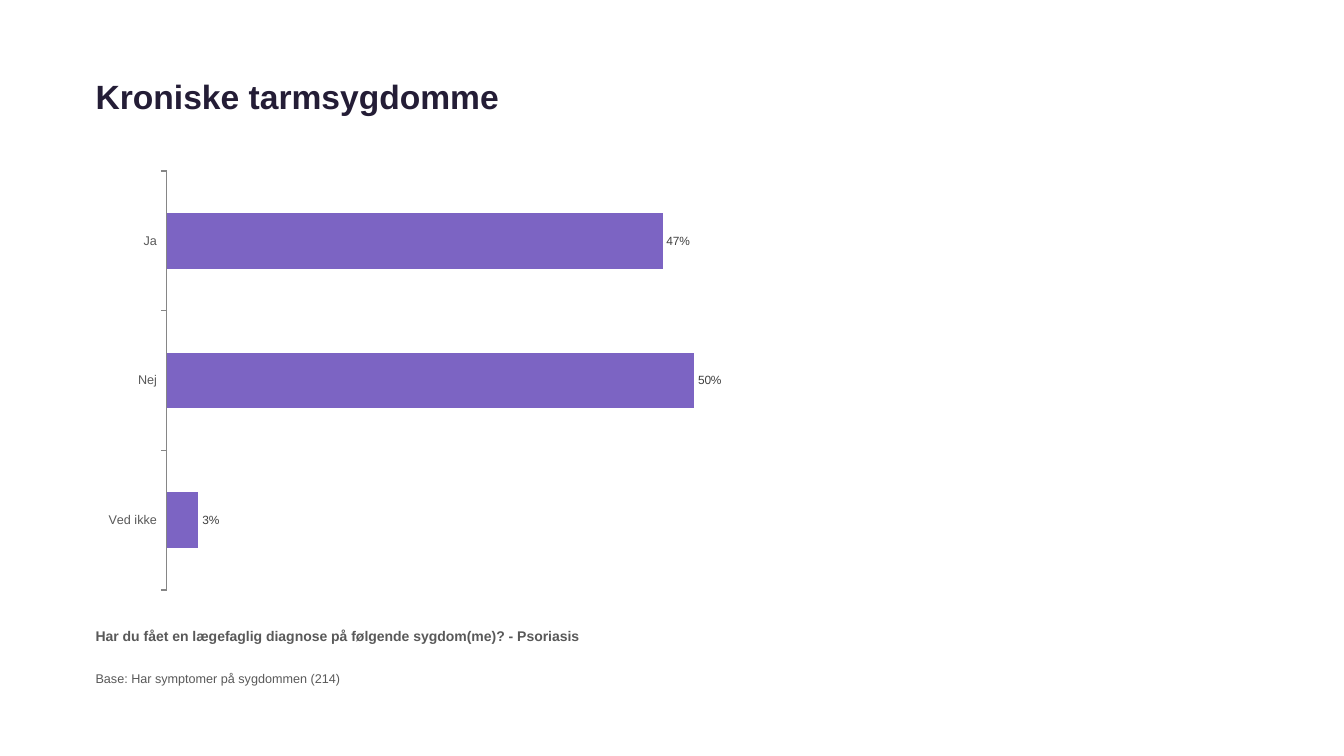
from lxml import etree
from pptx import Presentation
from pptx import util as u
from pptx.chart.data import CategoryChartData
from pptx.dml.color import RGBColor
from pptx.enum import chart as ch
from pptx.oxml.ns import qn

FONT = "Arial"
COLORS = {
    "title": "241D36",
    "text": "595959",
    "label": "404040",
    "bar": "7C64C3",
    "axis": "868686",
}
LEFT, WIDTH = 2.16, 29.54

# text, top, height (cm), size (pt), colour, bold
TEXTS = [
    ("Kroniske tarmsygdomme", 1.8, 1.27, 24, "title", True),
    ("Har du fået en lægefaglig diagnose på følgende sygdom(me)? - Psoriasis",
     15.7, 1.09, 10, "text", True),
    ("Base: Har symptomer på sygdommen (214)", 16.79, 0.71, 9, "text", False),
]
ANSWERS = {"Ved ikke": 0.03, "Nej": 0.5, "Ja": 0.47}
CHART_BOX = (LEFT, 4.09, 29.21, 11)
PLOT_LAYOUT = {"x": 0.07, "y": 0.02, "w": 0.91, "h": 0.96}


def rgb(name):
    return RGBColor.from_string(COLORS[name])


def style_font(font, size, color, bold=False):
    font.name = FONT
    font.size = u.Pt(size)
    font.bold = bold
    font.color.rgb = rgb(color)


def add_text(page, content, top, height, size, color, bold):
    box = page.shapes.add_textbox(*map(u.Cm, (LEFT, top, WIDTH, height)))
    box.text_frame.word_wrap = True
    para = box.text_frame.paragraphs[0]
    para.text = content
    style_font(para.font, size, color, bold)


def fix_plot_area(chart):
    """Pin the inner plot area to fixed fractions of the chart."""
    plot_area = chart.plots[0]._element.getparent()
    layout = plot_area.find(qn("c:layout"))
    if layout is None:
        layout = etree.Element(qn("c:layout"))
        plot_area.insert(0, layout)
    manual = etree.SubElement(layout, qn("c:manualLayout"))
    settings = {"layoutTarget": "inner", "xMode": "edge", "yMode": "edge", **PLOT_LAYOUT}
    for tag, value in settings.items():
        etree.SubElement(manual, qn(f"c:{tag}")).set("val", str(value))


def add_answer_chart(page):
    data = CategoryChartData(number_format="0%")
    data.categories = list(ANSWERS)
    data.add_series("Series 1", list(ANSWERS.values()))
    chart = page.shapes.add_chart(
        ch.XL_CHART_TYPE.BAR_CLUSTERED, *map(u.Cm, CHART_BOX), data).chart
    chart.has_legend = chart.has_title = False
    chart.font.name = FONT
    chart.font.size = u.Pt(18)

    plot = chart.plots[0]
    plot.vary_by_categories = False
    plot.gap_width, plot.overlap = 150, -10
    bars = plot.series[0].format.fill
    bars.solid()
    bars.fore_color.rgb = rgb("bar")

    plot.has_data_labels = True
    labels = plot.data_labels
    labels.show_value = True
    labels.position = ch.XL_LABEL_POSITION.OUTSIDE_END
    labels.number_format, labels.number_format_is_linked = "0%", False
    style_font(labels.font, 8.5, "label")

    answers = chart.category_axis
    answers.has_major_gridlines = False
    answers.major_tick_mark = ch.XL_TICK_MARK.OUTSIDE
    answers.tick_label_position = ch.XL_TICK_LABEL_POSITION.LOW
    answers.format.line.color.rgb = rgb("axis")
    answers.format.line.width = u.Pt(0.75)
    style_font(answers.tick_labels.font, 9, "text")

    share = chart.value_axis
    share.minimum_scale, share.maximum_scale, share.major_unit = 0, 1, 0.1
    share.has_major_gridlines = False
    share.visible = False
    fix_plot_area(chart)


def main():
    deck = Presentation()
    deck.slide_width, deck.slide_height = u.Cm(33.87), u.Cm(19.05)
    page = deck.slides.add_slide(deck.slide_layouts[6])
    for entry in TEXTS:
        add_text(page, *entry)
    add_answer_chart(page)
    deck.save("out.pptx")


if __name__ == "__main__":
    main()
